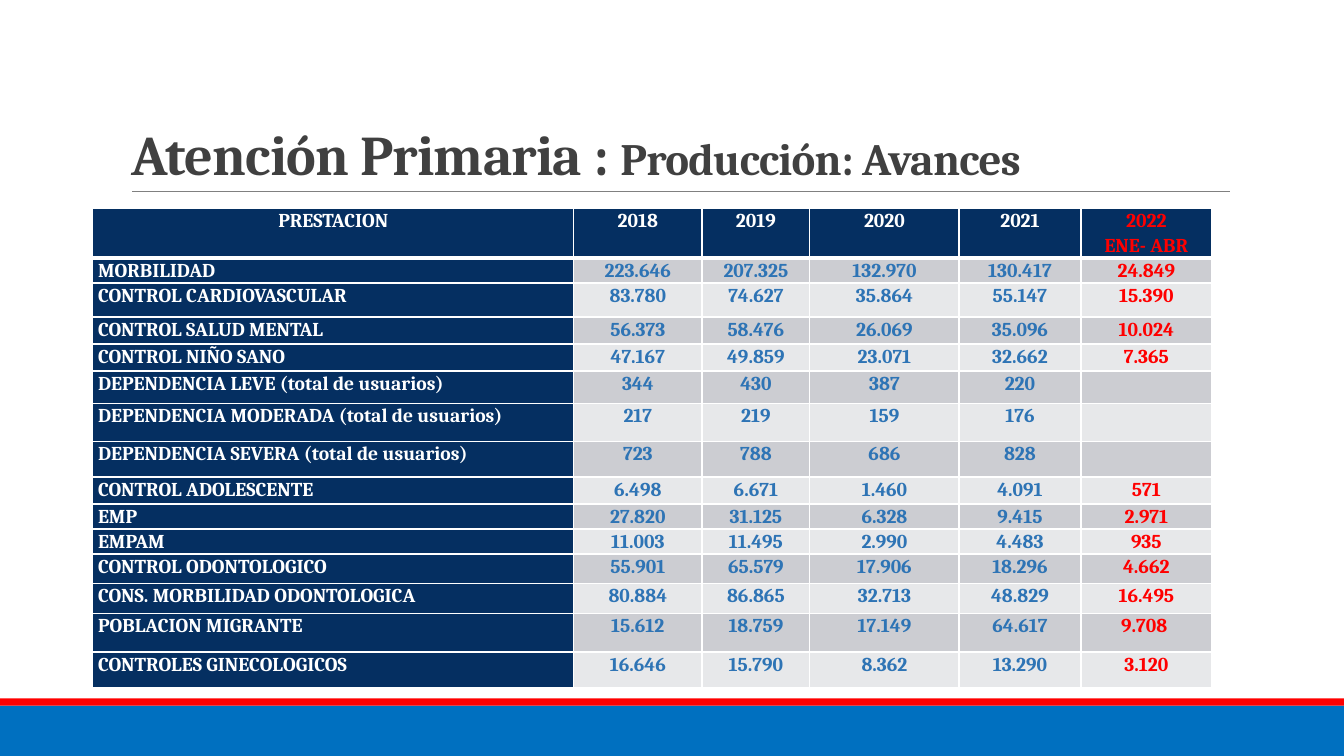
from typing import NamedTuple

from lxml import etree
from pptx import Presentation
from pptx.dml.color import RGBColor
from pptx.enum.shapes import MSO_CONNECTOR, MSO_SHAPE
from pptx.enum.text import MSO_ANCHOR, MSO_AUTO_SIZE, PP_ALIGN
from pptx.oxml.ns import qn
from pptx.util import Cm, Pt

LEFT, CENTER = PP_ALIGN.LEFT, PP_ALIGN.CENTER
RECT, STRAIGHT = MSO_SHAPE.RECTANGLE, MSO_CONNECTOR.STRAIGHT
BOTTOM, NO_FIT = MSO_ANCHOR.BOTTOM, MSO_AUTO_SIZE.NONE

FONT = "Cambria"
COLORS = {
    "blue": "0070C0", "red": "FF0000", "rule": "808080", "title": "404040",
    "navy": "052F61", "white": "FFFFFF", "figure": "2E74B5",
    "odd": "CCCDD2", "even": "E7E8EA",
}


class Bar(NamedTuple):
    top: float
    height: float
    color: str


class Service(NamedTuple):
    height: float
    name: str
    values: tuple[str, ...]


BARS = [Bar(17.78, 1.27, "blue"), Bar(17.6, 0.18, "red")]
TITLE = [("Atención Primaria : ", 40), ("Producción: Avances", 32)]
COLUMN_WIDTHS = [12.12, 3.23, 2.72, 3.76, 3.07, 3.3]
SERVICES = [
    Service(1.24, "PRESTACION", ("2018", "2019", "2020", "2021", "2022\nENE- ABR")),
    Service(0.63, "MORBILIDAD", ("223.646", "207.325", "132.970", "130.417", "24.849")),
    Service(0.86, "CONTROL CARDIOVASCULAR", ("83.780", "74.627", "35.864", "55.147", "15.390")),
    Service(0.68, "CONTROL SALUD MENTAL", ("56.373", "58.476", "26.069", "35.096", "10.024")),
    Service(0.68, "CONTROL NIÑO SANO", ("47.167", "49.859", "23.071", "32.662", "7.365")),
    Service(0.81, "DEPENDENCIA LEVE (total de usuarios)", ("344", "430", "387", "220", "")),
    Service(0.97, "DEPENDENCIA MODERADA (total de usuarios)", ("217", "219", "159", "176", "")),
    Service(0.89, "DEPENDENCIA SEVERA (total de usuarios)", ("723", "788", "686", "828", "")),
    Service(0.68, "CONTROL ADOLESCENTE", ("6.498", "6.671", "1.460", "4.091", "571")),
    Service(0.63, "EMP", ("27.820", "31.125", "6.328", "9.415", "2.971")),
    Service(0.63, "EMPAM", ("11.003", "11.495", "2.990", "4.483", "935")),
    Service(0.74, "CONTROL ODONTOLOGICO", ("55.901", "65.579", "17.906", "18.296", "4.662")),
    Service(0.76, "CONS. MORBILIDAD ODONTOLOGICA", ("80.884", "86.865", "32.713", "48.829", "16.495")),
    Service(0.97, "POBLACION MIGRANTE", ("15.612", "18.759", "17.149", "64.617", "9.708 ")),
    Service(0.89, "CONTROLES GINECOLOGICOS", ("16.646", "15.790", "8.362", "13.290", "3.120")),
]


def rgb(name: str) -> RGBColor:
    return RGBColor.from_string(COLORS[name])


def set_font(font, size: float, color: str) -> None:
    font.name, font.size, font.bold = FONT, Pt(size), True
    font.color.rgb = rgb(color)


def add_bar(s, bar: Bar) -> None:
    sp = s.shapes.add_shape(RECT, 0, Cm(bar.top), prs.slide_width, Cm(bar.height))
    sp.shadow.inherit = False
    sp.fill.solid()
    sp.fill.fore_color.rgb = rgb(bar.color)
    sp.line.fill.background()


def add_rule(s, left: float, right: float, y: float) -> None:
    line = s.shapes.add_connector(STRAIGHT, Cm(left), Cm(y), Cm(right), Cm(y))
    line.line.color.rgb = rgb("rule")
    line.line.width = Pt(0.5)
    etree.SubElement(line._element.spPr, qn("a:effectLst"))


def fill_title(sp) -> None:
    sp.left, sp.top, sp.width, sp.height = Cm(3.05), Cm(0.79), Cm(27.94), Cm(4.04)
    tf = sp.text_frame
    tf.auto_size, tf.vertical_anchor, tf.word_wrap = NO_FIT, BOTTOM, True
    p = tf.paragraphs[0]
    p.alignment, p.line_spacing = LEFT, 0.85
    for text, size in TITLE:
        r = p.add_run()
        r.text = text
        set_font(r.font, size, "title")
        r._r.get_or_add_rPr().set("spc", "-50")


def add_borders(cell, row: int) -> None:
    widths = {"lnL": 1, "lnR": 1, "lnT": 3 if row == 1 else 1, "lnB": 3 if row == 0 else 1}
    for tag, width in widths.items():
        ln = etree.SubElement(cell._tc.get_or_add_tcPr(), qn(f"a:{tag}"), w=str(Pt(width)))
        fill = etree.SubElement(ln, qn("a:solidFill"))
        etree.SubElement(fill, qn("a:srgbClr"), val=COLORS["white"])


def fill_cell(cell, row: int, col: int, text: str) -> None:
    cell.margin_left = cell.margin_right = Cm(0.13)
    cell.margin_top = cell.margin_bottom = 0
    add_borders(cell, row)
    cell.fill.solid()
    band = "odd" if row % 2 else "even"
    cell.fill.fore_color.rgb = rgb("navy" if row == 0 or col == 0 else band)
    if not text:
        return
    last = len(COLUMN_WIDTHS) - 1
    color = "red" if col == last else "white" if row == 0 or col == 0 else "figure"
    cell.text_frame.text = text
    for p in cell.text_frame.paragraphs:
        p.alignment = LEFT if col == 0 and row > 0 else CENTER
        p.line_spacing = 1.07
        set_font(p.font, 14, color)


def add_services_table(s) -> None:
    frame = s.shapes.add_table(
        len(SERVICES), len(COLUMN_WIDTHS), Cm(2.34), Cm(5.26),
        Cm(sum(COLUMN_WIDTHS)), Cm(sum(service.height for service in SERVICES)))
    table = frame.table
    for column, width in zip(table.columns, COLUMN_WIDTHS):
        column.width = Cm(width)
    for row, service in enumerate(SERVICES):
        table.rows[row].height = Cm(service.height)
        for col, text in enumerate((service.name, *service.values)):
            fill_cell(table.cell(row, col), row, col, text)


prs = Presentation()
prs.slide_width, prs.slide_height = Cm(33.87), Cm(19.05)
s = prs.slides.add_slide(prs.slide_layouts[5])

# Footer bars and the rule under the title
for bar in BARS:
    add_bar(s, bar)
add_rule(s, 3.33, 30.99, 4.83)

# Title and production table
fill_title(s.shapes.title)
add_services_table(s)

prs.save("out.pptx")
